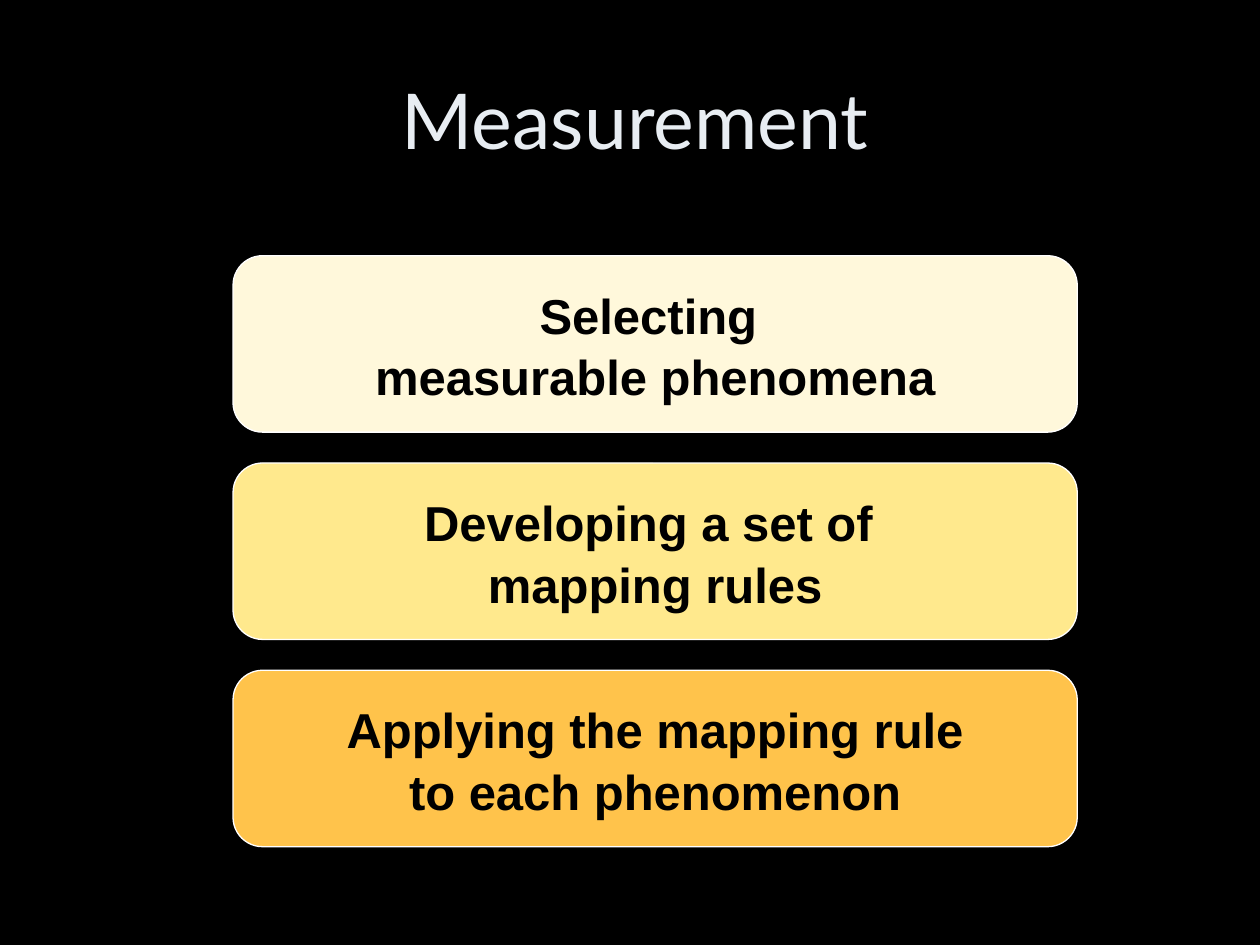
from typing import NamedTuple

from pptx import Presentation, util as u
from pptx.dml.color import RGBColor
from pptx.enum import shapes, text

WIDTH, HEIGHT = u.Inches(10), u.Inches(7.5)
LEFT, TOP, BOX_W, BOX_H, PITCH = 1.85, 2.03, 6.7, 1.4, 1.645


class Step(NamedTuple):
    """One stage of measurement, with its box colour."""
    label: str
    fill: str


STEPS = [
    Step("Selecting \nmeasurable phenomena", "FFF8DB"),
    Step("Developing a set of \nmapping rules", "FFE98D"),
    Step("Applying the mapping rule\nto each phenomenon", "FFC34B"),
]


def rgb(value: str) -> RGBColor:
    """Turn a hex string into a colour."""
    return RGBColor.from_string(value)


def format_text(tf, font: str, size: float, color: str, bold: bool) -> None:
    """Centre the paragraphs and format their runs."""
    tf.vertical_anchor = text.MSO_ANCHOR.MIDDLE
    for p in tf.paragraphs:
        p.alignment = text.PP_ALIGN.CENTER
        for r in p.runs:
            r.font.name, r.font.size, r.font.bold = font, u.Pt(size), bold
            r.font.color.rgb = rgb(color)


def add_title(s, title: str) -> None:
    """Fill and place the title placeholder."""
    sp = s.shapes.title
    sp.left, sp.top = u.Inches(0.83), u.Inches(0.36)
    sp.width, sp.height = u.Inches(8.42), u.Inches(1.17)
    sp.text_frame.text = title
    format_text(sp.text_frame, "Lato", 44, "E8EDF2", False)


def add_step(s, row: int, step: Step) -> None:
    """Draw a step as a rounded box in its row."""
    sp = s.shapes.add_shape(
        shapes.MSO_SHAPE.ROUNDED_RECTANGLE, u.Inches(LEFT),
        u.Inches(TOP + row * PITCH), u.Inches(BOX_W), u.Inches(BOX_H))
    sp.adjustments[0] = 0.167
    sp.shadow.inherit = False
    sp.fill.solid()
    sp.fill.fore_color.rgb = rgb(step.fill)
    sp.line.color.rgb = rgb("FFFFFF")
    sp.line.width = u.Pt(0.75)
    tf = sp.text_frame
    tf.text = step.label
    tf.word_wrap = False
    format_text(tf, "Arial", 28, "000000", True)
    for p in tf.paragraphs:
        p.line_spacing = 1.05


def main() -> None:
    """Build and save the slide."""
    prs = Presentation()
    prs.slide_width, prs.slide_height = WIDTH, HEIGHT
    s = prs.slides.add_slide(prs.slide_layouts[5])
    s.background.fill.solid()
    s.background.fill.fore_color.rgb = rgb("000000")
    add_title(s, "Measurement")
    for row, step in enumerate(STEPS):
        add_step(s, row, step)
    prs.save("out.pptx")


if __name__ == "__main__":
    main()
